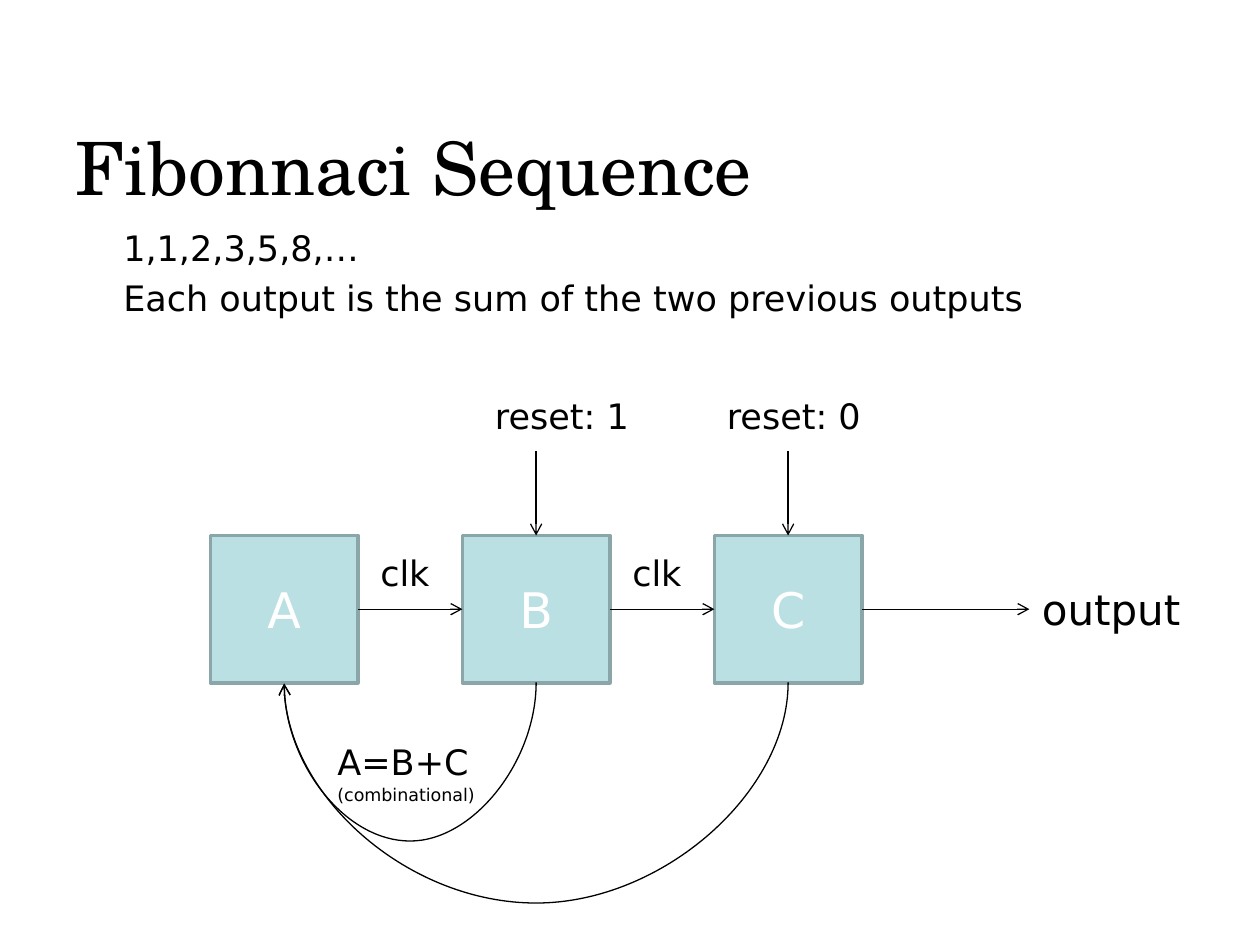
from dataclasses import dataclass

from lxml.etree import SubElement
from pptx import Presentation
from pptx.dml.color import RGBColor
from pptx.enum.shapes import MSO_CONNECTOR, MSO_SHAPE
from pptx.enum.text import MSO_ANCHOR, MSO_AUTO_SIZE, PP_ALIGN
from pptx.oxml.ns import qn
from pptx.util import Inches, Pt


@dataclass(frozen=True)
class Theme:
    black: RGBColor = RGBColor(0x00, 0x00, 0x00)
    white: RGBColor = RGBColor(0xFF, 0xFF, 0xFF)
    box_fill: RGBColor = RGBColor(0xBB, 0xE0, 0xE3)
    box_line: RGBColor = RGBColor(0x8A, 0xA6, 0xA8)
    title_font: str = "TeX Gyre Schola"
    body_font: str = "DejaVu Sans"
    title_size: int = 42
    register_size: int = 28
    output_size: int = 24
    body_size: int = 20
    note_size: int = 10


THEME = Theme()
BOX_SIZE = 1.17
BOX_TOP = 4.25
BOX_PITCH = 2
FIRST_LEFT = 1.67
BOX_MIDDLE = BOX_TOP + BOX_SIZE / 2
BOX_BOTTOM = BOX_TOP + BOX_SIZE


def register_left(index):
    return FIRST_LEFT + index * BOX_PITCH


def register_center(index):
    return register_left(index) + BOX_SIZE / 2


def set_font(paragraph, size, color=THEME.black, name=THEME.body_font):
    paragraph.font.size = Pt(size)
    paragraph.font.name = name
    paragraph.font.color.rgb = color


def add_title(slide, text):
    title = slide.shapes.title
    title.left, title.top = Inches(0.5), Inches(1)
    title.width, title.height = Inches(7.92), Inches(0.73)
    frame = title.text_frame
    frame.text = text
    frame.auto_size = MSO_AUTO_SIZE.NONE
    frame.vertical_anchor = MSO_ANCHOR.MIDDLE
    paragraph = frame.paragraphs[0]
    paragraph.alignment = PP_ALIGN.LEFT
    paragraph.line_spacing = 0.9
    set_font(paragraph, THEME.title_size, name=THEME.title_font)


def add_text(slide, lines, left, top, width, height, size=THEME.body_size, indent=0):
    box = slide.shapes.add_textbox(Inches(left), Inches(top), Inches(width), Inches(height))
    frame = box.text_frame
    frame.word_wrap = True
    frame.text = "\n".join(lines)
    for index, paragraph in enumerate(frame.paragraphs):
        if indent:
            paragraph._p.get_or_add_pPr().set("marL", str(Inches(indent)))
        if index:
            paragraph.space_before = Pt(4.7)
        set_font(paragraph, size)


def add_register(slide, name, index):
    box = slide.shapes.add_shape(
        MSO_SHAPE.RECTANGLE, Inches(register_left(index)), Inches(BOX_TOP),
        Inches(BOX_SIZE), Inches(BOX_SIZE))
    box.shadow.inherit = False
    box.fill.solid()
    box.fill.fore_color.rgb = THEME.box_fill
    box.line.color.rgb = THEME.box_line
    box.line.width = Pt(2)
    frame = box.text_frame
    frame.text = name
    frame.vertical_anchor = MSO_ANCHOR.MIDDLE
    paragraph = frame.paragraphs[0]
    paragraph.alignment = PP_ALIGN.CENTER
    set_font(paragraph, THEME.register_size, THEME.white)


def add_arrow(slide, start, end, kind=MSO_CONNECTOR.STRAIGHT):
    arrow = slide.shapes.add_connector(kind, *(Inches(value) for value in (*start, *end)))
    arrow.line.color.rgb = THEME.black
    arrow.line.width = Pt(0.75)
    SubElement(arrow.line._get_or_add_ln(), qn("a:tailEnd"), type="arrow")
    SubElement(arrow._element.spPr, qn("a:effectLst"))
    return arrow


def add_feedback(slide, source, depth):
    """Curve from below a register back to A: a quarter-turned connector bulging by depth."""
    thickness = 0.01
    span = source * BOX_PITCH
    middle = register_center(0) + span / 2
    arrow = add_arrow(
        slide,
        (middle - thickness / 2, BOX_BOTTOM - span / 2),
        (middle + thickness / 2, BOX_BOTTOM + span / 2),
        MSO_CONNECTOR.CURVE)
    properties = arrow._element.spPr
    properties.find(qn("a:xfrm")).set("rot", str(90 * 60000))
    adjustments = properties.find(qn("a:prstGeom")).find(qn("a:avLst"))
    bulge = round(depth / thickness * 100000)
    SubElement(adjustments, qn("a:gd"), name="adj1", fmla=f"val {bulge}")


def main():
    presentation = Presentation()
    presentation.slide_width, presentation.slide_height = Inches(10), Inches(7.5)
    slide = presentation.slides.add_slide(presentation.slide_layouts[5])

    add_title(slide, "Fibonnaci Sequence")
    add_text(slide, ["1,1,2,3,5,8,…", "Each output is the sum of the two previous outputs"],
             0.5, 1.75, 9.25, 0.84, indent=0.38)

    for index, name in enumerate("ABC"):
        add_register(slide, name, index)

    for index in range(2):
        right = register_left(index) + BOX_SIZE
        add_arrow(slide, (right, BOX_MIDDLE), (register_left(index + 1), BOX_MIDDLE))
        add_text(slide, ["clk"], right + 0.08, 4.33, 1.67, 0.44)
    add_arrow(slide, (register_left(2) + BOX_SIZE, BOX_MIDDLE), (8.17, BOX_MIDDLE))
    add_text(slide, ["output"], 8.17, 4.58, 1.58, 0.5, THEME.output_size)

    for index, value, left in ((1, 1, 3.83), (2, 0, 5.67)):
        center = register_center(index)
        add_arrow(slide, (center, 3.58), (center, BOX_TOP))
        add_text(slide, [f"reset: {value}"], left, 3.08, 1.67, 0.44)

    for source, depth in ((2, 1.78), (1, 1.28)):
        add_feedback(slide, source, depth)
    add_text(slide, ["A=B+C"], 2.58, 5.83, 1.67, 0.44)
    add_text(slide, ["(combinational)"], 2.58, 6.17, 1.67, 0.27, THEME.note_size)

    presentation.save("out.pptx")


if __name__ == "__main__":
    main()
